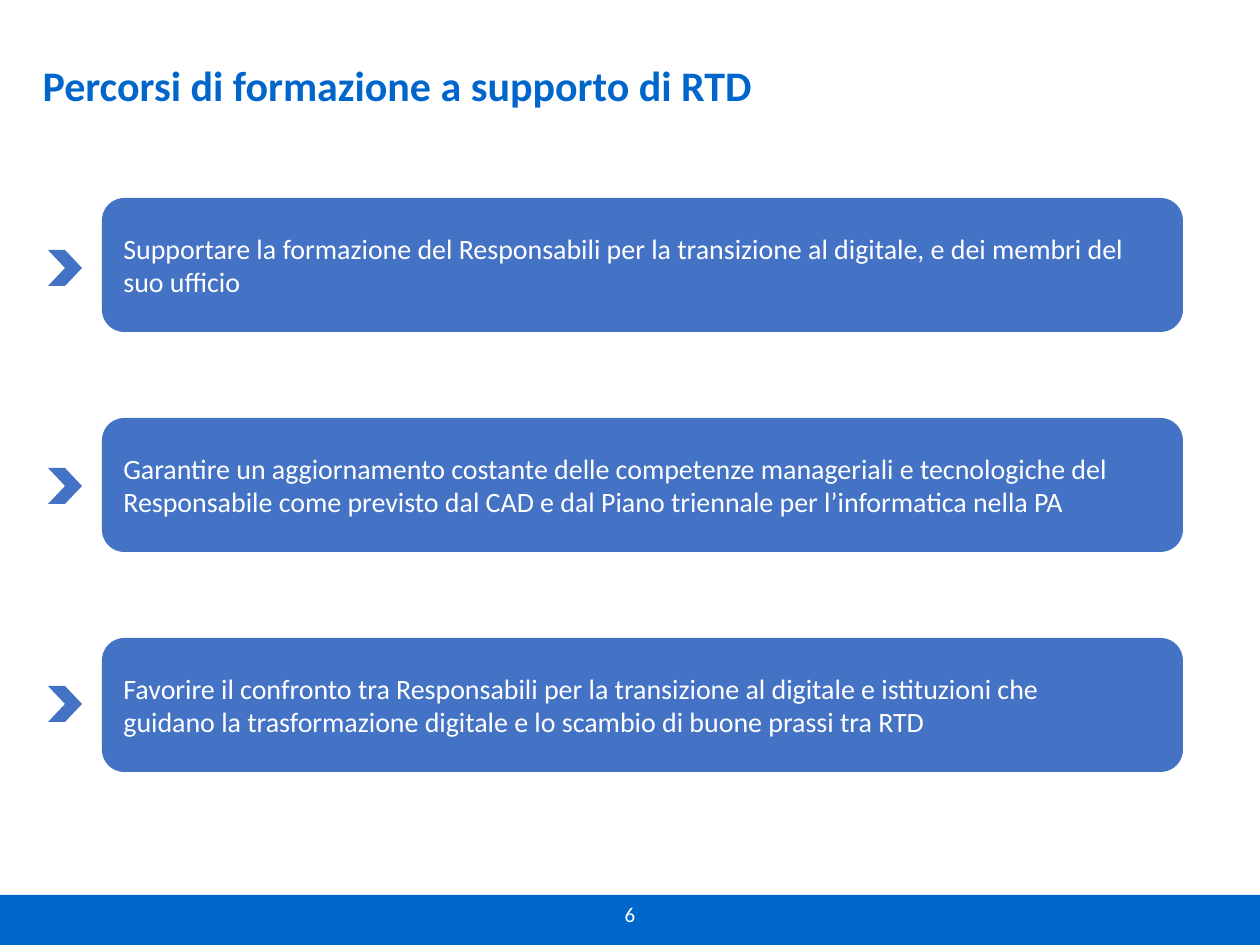
from pptx import Presentation
from pptx.dml.color import RGBColor
from pptx.enum.shapes import MSO_SHAPE
from pptx.enum.text import MSO_ANCHOR, PP_ALIGN
from pptx.util import Emu, Pt

RECT, ROUNDED, CHEVRON = MSO_SHAPE.RECTANGLE, MSO_SHAPE.ROUNDED_RECTANGLE, MSO_SHAPE.CHEVRON
LEFT, CENTER, TOP = PP_ALIGN.LEFT, PP_ALIGN.CENTER, MSO_ANCHOR.TOP

PX = 914400 / 126
BRAND, PANEL, WHITE = "0066CC", "4472C4", "FFFFFF"

prs = Presentation()
prs.slide_width, prs.slide_height = Emu(round(1260 * PX)), Emu(round(945 * PX))
slide = prs.slides.add_slide(prs.slide_layouts[5])


def add_block(preset, box, color):
    block = slide.shapes.add_shape(preset, *[Emu(round(v * PX)) for v in box])
    block.shadow.inherit = False
    block.fill.solid()
    block.fill.fore_color.rgb = RGBColor.from_string(color)
    block.line.fill.background()


def write(holder, box, text, size, color, bold=False, align=LEFT):
    holder.left, holder.top, holder.width, holder.height = [Emu(round(v * PX)) for v in box]
    frame = holder.text_frame
    frame.word_wrap = True
    frame.vertical_anchor = TOP
    paragraph = frame.paragraphs[0]
    paragraph.alignment = align
    run = paragraph.add_run()
    run.text = text
    run.font.name = "Calibri"
    run.font.size = Pt(size)
    run.font.bold = bold
    run.font.color.rgb = RGBColor.from_string(color)


# Title
write(slide.shapes.title, (30, 53, 1128, 63), "Percorsi di formazione a supporto di RTD",
      24, BRAND, bold=True)

# Footer band with page number
add_block(RECT, (0, 895, 1262, 50), BRAND)
page_number = slide.shapes.add_textbox(0, 0, 0, 0)
write(page_number, (0, 895, 1260, 38), "6", 12, WHITE, align=CENTER)

# Goals: chevron, panel and text, with the text width of each
goals = [
    ("Supportare la formazione del Responsabili per la transizione al digitale, "
     "e dei membri del suo ufficio", 1048),
    ("Garantire un aggiornamento costante delle competenze manageriali e tecnologiche del "
     "Responsabile come previsto dal CAD e dal Piano triennale per l’informatica nella PA", 1048),
    ("Favorire il confronto tra Responsabili per la transizione al digitale e istituzioni che "
     "guidano la trasformazione digitale e lo scambio di buone prassi tra RTD", 1014),
]
for row, (goal, text_width) in enumerate(goals):
    panel_top = 198 + 220 * row
    add_block(CHEVRON, (48, 250 + 218 * row, 34, 36), PANEL)
    add_block(ROUNDED, (102, panel_top, 1081, 134), PANEL)
    goal_text = slide.shapes.add_textbox(0, 0, 0, 0)
    write(goal_text, (111, panel_top + 27, text_width, 81), goal, 16, WHITE)

prs.save("out.pptx")
